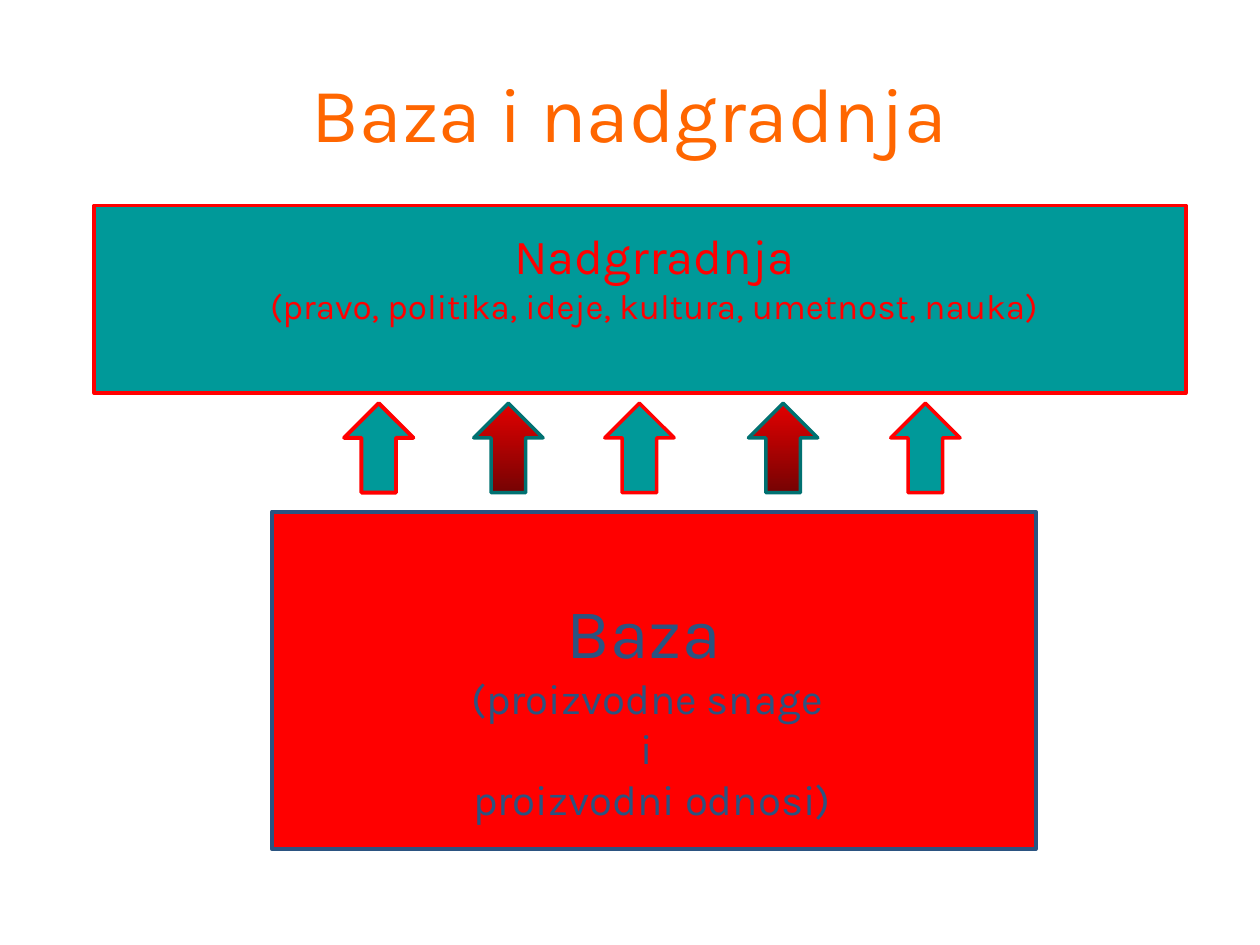
"""Build a slide on base and superstructure in social theory."""
from pptx import Presentation
from pptx import util as u
from pptx.dml.color import RGBColor
from pptx.enum import shapes, text

FONT = "Karla"
COLORS = {
    "orange": "FF6600",
    "red": "FF0000",
    "teal": "009999",
    "dark_teal": "007171",
    "blue": "2B5481",
    "bright_red": "E30000",
    "dark_red": "760303",
}
ARROW_LEFTS = (196.6, 270.7, 345.6, 427.7, 509)


def color(name):
    return RGBColor.from_string(COLORS[name])


def frame(left, top, width, height):
    return [u.Pt(length) for length in (left, top, width, height)]


def add_block(page, kind, place, fill, line, weight=2.25):
    block = page.shapes.add_shape(kind, *frame(*place))
    block.shadow.inherit = False
    if isinstance(fill, tuple):
        block.fill.gradient()
        block.fill.gradient_angle = 270
        for stop, name in zip(block.fill.gradient_stops, fill):
            stop.color.rgb = color(name)
    else:
        block.fill.solid()
        block.fill.fore_color.rgb = color(fill)
    block.line.color.rgb = color(line)
    block.line.width = u.Pt(weight)


def add_label(page, place, lines, tint, anchor=text.MSO_ANCHOR.TOP):
    box = page.shapes.add_textbox(*frame(*place))
    body = box.text_frame
    body.word_wrap = True
    body.vertical_anchor = anchor
    for index, (words, size) in enumerate(lines):
        para = body.add_paragraph() if index else body.paragraphs[0]
        para.alignment = text.PP_ALIGN.CENTER
        span = para.add_run()
        span.text = words
        span.font.name = FONT
        span.font.size = u.Pt(size)
        span.font.color.rgb = color(tint)


def add_arrows(page):
    styles = (
        ("teal", "red"),
        (("bright_red", "dark_red"), "dark_teal"),
    )
    for index, left in enumerate(ARROW_LEFTS):
        fill, line = styles[index % 2]
        weight = 2 if index else 2.25
        add_block(page, shapes.MSO_SHAPE.UP_ARROW, (left, 230.4, 39.6, 51.1),
                  fill, line, weight)


def main():
    deck = Presentation()
    deck.slide_width, deck.slide_height = u.Pt(720), u.Pt(540)
    page = deck.slides.add_slide(deck.slide_layouts[6])

    add_label(page, (36, 30.2, 648, 67), [("Baza i nadgradnja", 44)],
              "orange", text.MSO_ANCHOR.MIDDLE)
    rectangle = shapes.MSO_SHAPE.RECTANGLE
    add_block(page, rectangle, (155.5, 292.3, 436.3, 193), "red", "blue")
    add_block(page, rectangle, (54, 117.4, 623.5, 107.3), "teal", "red")
    add_arrows(page)
    add_label(page, (169.9, 332.6, 405.4, 142.6), [
        ("Baza ", 40),
        ("(proizvodne snage ", 24),
        ("i ", 24),
        ("proizvodni odnosi)", 24),
    ], "blue")
    add_label(page, (105.1, 125.3, 537.8, 89.3), [
        ("Nadgrradnja", 28),
        ("(pravo, politika, ideje, kultura, umetnost, nauka)", 20),
    ], "red")
    deck.save("out.pptx")


if __name__ == "__main__":
    main()
